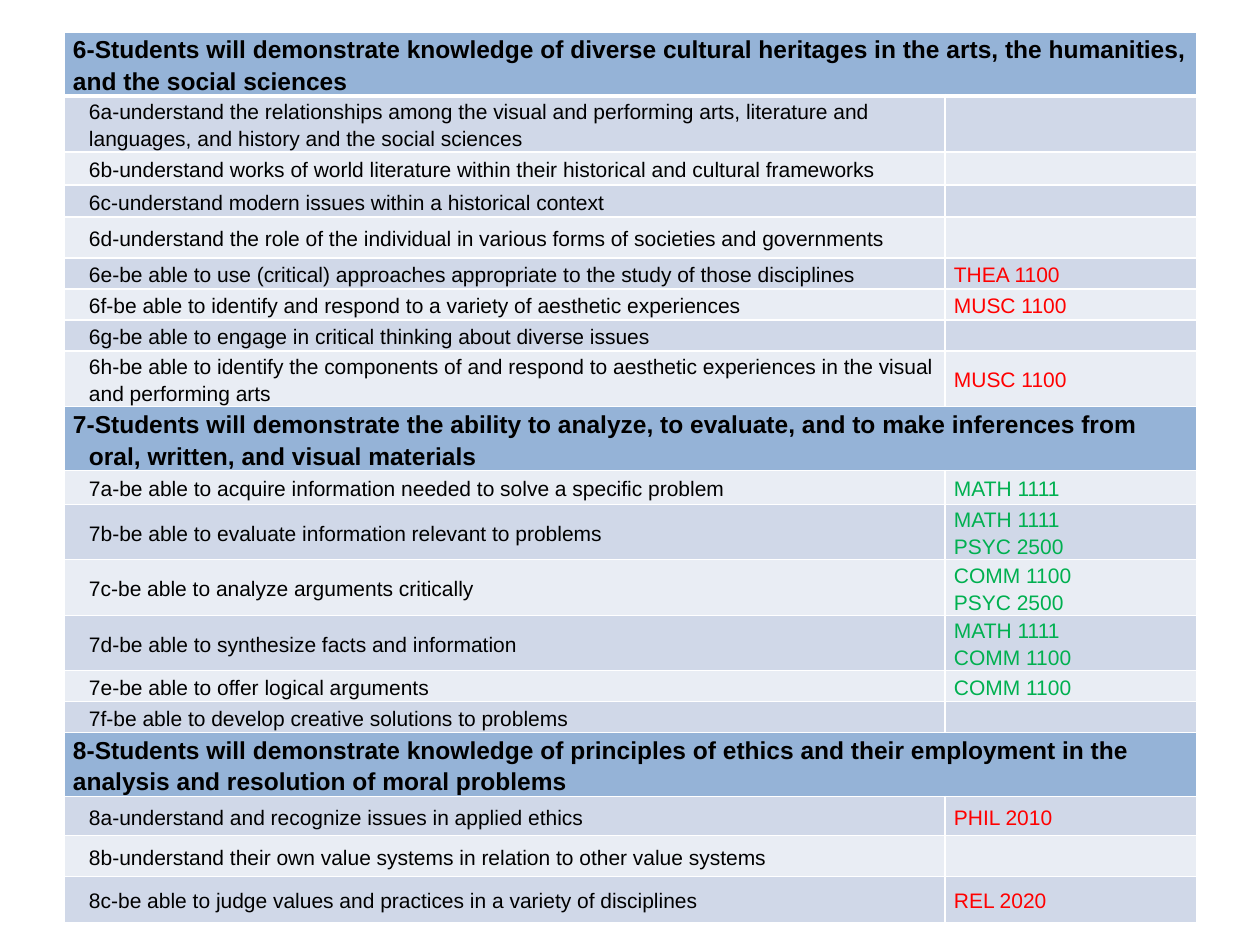
from lxml import etree
from pptx import Presentation
from pptx.dml.color import RGBColor
from pptx.enum.text import MSO_ANCHOR
from pptx.oxml.ns import qn
from pptx.util import Pt

PX = 914400 // 126
MIDDLE = MSO_ANCHOR.MIDDLE

BLACK = RGBColor(0x00, 0x00, 0x00)
RED = RGBColor(0xFF, 0x00, 0x00)
GREEN = RGBColor(0x00, 0xB0, 0x50)
HEADING_BLUE = RGBColor(0x95, 0xB3, 0xD7)
BANDS = (RGBColor(0xE9, 0xED, 0xF4), RGBColor(0xD0, 0xD8, 0xE8))

# Each goal: heading, heading height, hanging indent, course colour,
# and its outcomes as (text, courses, row height)
GOALS = [
    ("6-Students will demonstrate knowledge of diverse cultural heritages in the arts, the humanities, and the social sciences",
     64, 0, RED, [
         ("6a-understand the relationships among the visual and performing arts, literature and languages, and history and the social sciences", "", 56),
         ("6b-understand works of world literature within their historical and cultural frameworks", "", 33),
         ("6c-understand modern issues within a historical context", "", 32),
         ("6d-understand the role of the individual in various forms of societies and governments", "", 41),
         ("6e-be able to use (critical) approaches appropriate to the study of those disciplines", "THEA 1100", 31),
         ("6f-be able to identify and respond to a variety of aesthetic experiences", "MUSC 1100", 31),
         ("6g-be able to engage in critical thinking about diverse issues", "", 31),
         ("6h-be able to identify the components of and respond to aesthetic experiences in the visual and performing arts", "MUSC 1100", 56),
     ]),
    ("7-Students will demonstrate the ability to analyze, to evaluate, and to make inferences from oral, written, and visual materials",
     64, 16, GREEN, [
         ("7a-be able to acquire information needed to solve a specific problem", "MATH 1111", 34),
         ("7b-be able to evaluate information relevant to problems", "MATH 1111\nPSYC 2500", 55),
         ("7c-be able to analyze arguments critically", "COMM 1100\nPSYC 2500", 56),
         ("7d-be able to synthesize facts and information", "MATH 1111\nCOMM 1100", 55),
         ("7e-be able to offer logical arguments", "COMM 1100", 31),
         ("7f-be able to develop creative solutions to problems", "", 31),
     ]),
    ("8-Students will demonstrate knowledge of principles of ethics and their employment in the analysis and resolution of moral problems",
     64, 0, RED, [
         ("8a-understand and recognize issues in applied ethics", "PHIL 2010", 39),
         ("8b-understand their own value systems in relation to other value systems", "", 41),
         ("8c-be able to judge values and practices in a variety of disciplines", "REL 2020", 46),
     ]),
]
LEFT, TOP = 64, 32
COLUMN_WIDTHS = (881, 252)
OUTCOME_INDENT = 16
CELL_MARGIN = 9


def add_borders(cell, top=1, bottom=1):
    """White rules on all four sides, widths in points."""
    properties = cell._tc.get_or_add_tcPr()
    sides = (("a:lnL", 1), ("a:lnR", 1), ("a:lnT", top), ("a:lnB", bottom))
    for position, (side, width) in enumerate(sides):
        line = etree.Element(qn(side), w=str(Pt(width)))
        fill = etree.SubElement(line, qn("a:solidFill"))
        etree.SubElement(fill, qn("a:srgbClr"), val="FFFFFF")
        properties.insert(position, line)


def fill_cell(cell, text, fill, color=BLACK, size=12, bold=False, left=0, hanging=0):
    cell.fill.solid()
    cell.fill.fore_color.rgb = fill
    cell.vertical_anchor = MIDDLE
    cell.margin_left = cell.margin_right = CELL_MARGIN * PX
    cell.margin_top = cell.margin_bottom = 0
    paragraph = cell.text_frame.paragraphs[0]
    paragraph.text = text
    paragraph.line_spacing = 1.15
    for run in paragraph.runs:
        run.font.name = "Arial"
        run.font.size = Pt(size)
        run.font.bold = bold
        run.font.color.rgb = color
    # Line breaks and empty cells need the size too, or rows grow
    for line_break in paragraph._p.findall(qn("a:br")):
        etree.SubElement(line_break, qn("a:rPr"), sz=str(size * 100))
    if not text:
        etree.SubElement(paragraph._p, qn("a:endParaRPr"), sz=str(size * 100))
    if left:
        indents = paragraph._p.get_or_add_pPr()
        indents.set("marL", str(left * PX))
        indents.set("indent", str(-hanging * PX))


prs = Presentation()
prs.slide_width, prs.slide_height = 1260 * PX, 945 * PX
slide = prs.slides.add_slide(prs.slide_layouts[6])

# Table grid
heights = []
for _, heading_height, _, _, outcomes in GOALS:
    heights += [heading_height] + [height for _, _, height in outcomes]
goals_table = slide.shapes.add_table(
    len(heights), len(COLUMN_WIDTHS), LEFT * PX, TOP * PX,
    sum(COLUMN_WIDTHS) * PX, sum(heights) * PX).table
goals_table.first_row = goals_table.horz_banding = False
for column, width in zip(goals_table.columns, COLUMN_WIDTHS):
    column.width = width * PX
for row, height in zip(goals_table.rows, heights):
    row.height = height * PX

# Headings and outcomes, banded by row number
index = 0
for heading, _, hanging, course_color, outcomes in GOALS:
    heading_cell, spanned_cell = goals_table.rows[index].cells
    fill_cell(spanned_cell, "", HEADING_BLUE)
    heading_cell.merge(spanned_cell)
    fill_cell(heading_cell, heading, HEADING_BLUE, size=14, bold=True,
              left=hanging, hanging=hanging)
    for index, (outcome, courses, _) in enumerate(outcomes, index + 1):
        outcome_cell, course_cell = goals_table.rows[index].cells
        band = BANDS[index % 2]
        fill_cell(outcome_cell, outcome, band, left=OUTCOME_INDENT)
        fill_cell(course_cell, courses, band, color=course_color)
    index += 1

# Borders, with a heavier rule under the first heading
for number, row in enumerate(goals_table.rows):
    for cell in row.cells:
        add_borders(cell, top=3 if number == 1 else 1, bottom=3 if number == 0 else 1)

prs.save("out.pptx")
